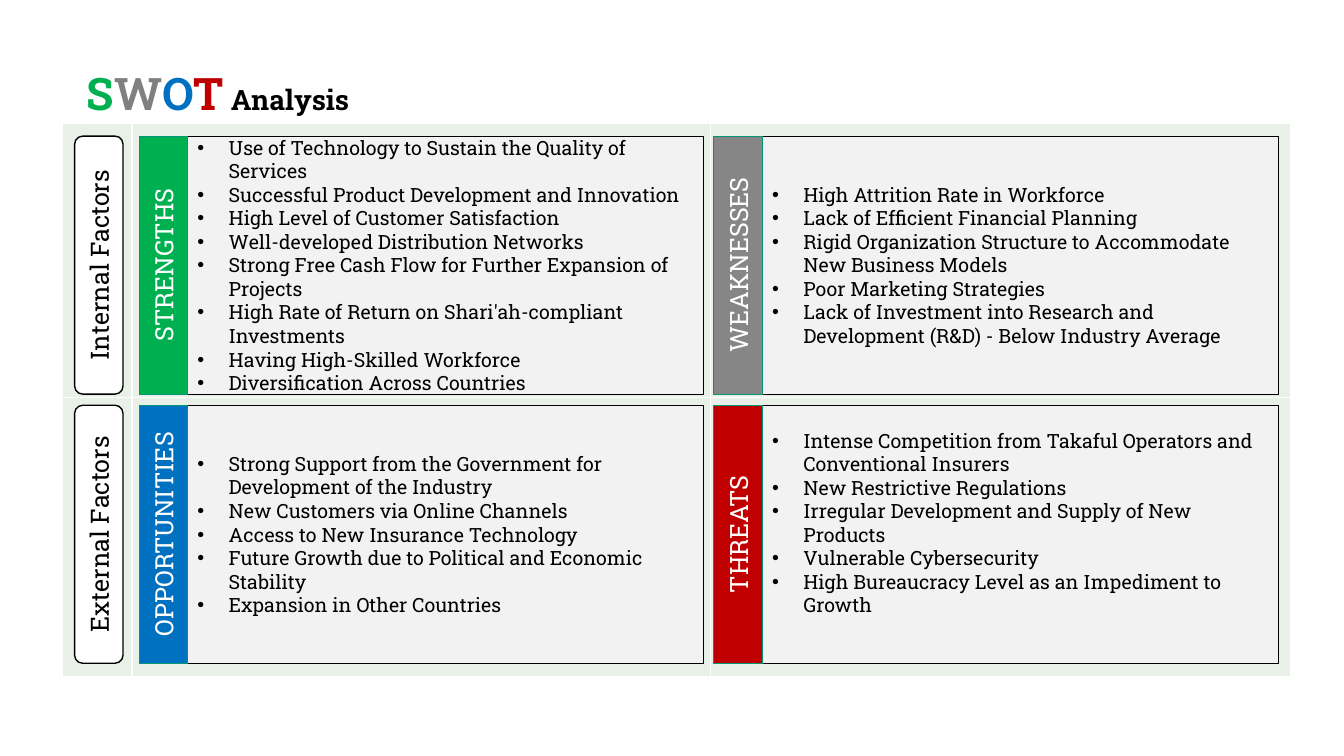
"""Build a SWOT analysis slide with two factor rows and four quadrants."""
from lxml import etree
from pptx import Presentation
from pptx.dml.color import RGBColor
from pptx.enum.shapes import MSO_SHAPE
from pptx.enum.text import MSO_ANCHOR, MSO_AUTO_SIZE, PP_ALIGN
from pptx.oxml.ns import qn
from pptx.util import Inches, Pt

RECT, ROUNDED = MSO_SHAPE.RECTANGLE, MSO_SHAPE.ROUNDED_RECTANGLE
LEFT, CENTER = PP_ALIGN.LEFT, PP_ALIGN.CENTER
TOP, MIDDLE = MSO_ANCHOR.TOP, MSO_ANCHOR.MIDDLE
NO_FIT = MSO_AUTO_SIZE.NONE

GREEN = RGBColor(0x00, 0xB0, 0x50)
GRAY = RGBColor(0x80, 0x80, 0x80)
BAND_GRAY = RGBColor(0x86, 0x86, 0x86)
BLUE = RGBColor(0x00, 0x70, 0xC0)
RED = RGBColor(0xC0, 0x00, 0x00)
TEAL = RGBColor(0x02, 0x96, 0x76)
BLACK = RGBColor(0x00, 0x00, 0x00)
WHITE = RGBColor(0xFF, 0xFF, 0xFF)
PANEL = RGBColor(0xF2, 0xF2, 0xF2)
GRID = RGBColor(0xE9, 0xF0, 0xE8)
FONT = "Roboto Slab"

TITLE = [("S", 32, GREEN), ("W", 32, GRAY), ("O", 32, BLUE), ("T", 32, RED),
         (" Analysis", 20, BLACK)]
FACTORS = ["Internal Factors", "External Factors"]
QUADRANTS = [
    ("STRENGTHS", GREEN, [
        "Use of Technology to Sustain the Quality of Services",
        "Successful Product Development and Innovation",
        "High Level of Customer Satisfaction",
        "Well-developed Distribution Networks",
        "Strong Free Cash Flow for Further Expansion of Projects",
        "High Rate of Return on Shari'ah-compliant Investments",
        "Having High-Skilled Workforce",
        "Diversification Across Countries"]),
    ("WEAKNESSES", BAND_GRAY, [
        "High Attrition Rate in Workforce",
        "Lack of Efficient Financial Planning",
        "Rigid Organization Structure to Accommodate New Business Models",
        "Poor Marketing Strategies",
        "Lack of Investment into Research and Development (R&D) - Below Industry Average"]),
    ("OPPORTUNITIES", BLUE, [
        "Strong Support from the Government for Development of the Industry",
        "New Customers via Online Channels",
        "Access to New Insurance Technology",
        "Future Growth due to Political and Economic Stability",
        "Expansion in Other Countries"]),
    ("THREATS", RED, [
        "Intense Competition from Takaful Operators and Conventional Insurers",
        "New Restrictive Regulations",
        "Irregular Development and Supply of New Products",
        "Vulnerable Cybersecurity",
        "High Bureaucracy Level as an Impediment to Growth"]),
]
BOTTOM_INSETS = {"THREATS": 0.28}

COLS, ROWS = [0.69, 5.74, 5.75], [2.72, 2.77]
BOX_X, BOX_Y, BOX_W, BOX_H = 1.86, 1.35, 5.12, 2.56
COL_STEP, ROW_STEP = 5.7, 2.67
BAND_W, FACTOR_X = 0.48, 0.98


def add_run(p, text, size, color, bold=False):
    r = p.add_run()
    r.text = text
    r.font.name, r.font.size, r.font.bold = FONT, Pt(size), bold
    r.font.color.rgb = color


def add_block(s, kind, x, y, w, h, fill, line, weight):
    sp = s.shapes.add_shape(kind, Inches(x), Inches(y), Inches(w), Inches(h))
    sp.shadow.inherit = False
    sp.fill.solid()
    sp.fill.fore_color.rgb = fill
    sp.line.color.rgb = line
    sp.line.width = Pt(weight)
    sp.text_frame.word_wrap = True
    sp.text_frame.vertical_anchor = MIDDLE
    return sp


def add_upright(s, kind, center_x, row, text, fill, line, weight, color):
    center_y = BOX_Y + row * ROW_STEP + BOX_H / 2
    sp = add_block(s, kind, center_x - BOX_H / 2, center_y - BAND_W / 2,
                   BOX_H, BAND_W, fill, line, weight)
    sp.rotation = 270
    p = sp.text_frame.paragraphs[0]
    p.alignment = CENTER
    add_run(p, text, 18, color)


def add_bullets(tf, items):
    for i, item in enumerate(items):
        p = tf.add_paragraph() if i else tf.paragraphs[0]
        p.alignment = LEFT
        pPr = p._p.get_or_add_pPr()
        pPr.set("marL", str(Inches(0.31)))
        pPr.set("indent", str(-Inches(0.31)))
        etree.SubElement(pPr, qn("a:buFont"), typeface="Arial")
        etree.SubElement(pPr, qn("a:buChar"), char="•")
        add_run(p, item, 14, BLACK)


def add_title(s):
    sp = s.shapes.title
    sp.left, sp.top = Inches(0.76), Inches(0.6)
    sp.width, sp.height = Inches(2.84), Inches(0.64)
    tf = sp.text_frame
    tf.auto_size, tf.vertical_anchor = NO_FIT, TOP
    p = tf.paragraphs[0]
    p.alignment = LEFT
    for text, size, color in TITLE:
        add_run(p, text, size, color, True)


def add_grid(s):
    table = s.shapes.add_table(len(ROWS), len(COLS), Inches(0.62), Inches(1.22),
                               Inches(sum(COLS)), Inches(sum(ROWS))).table
    table.first_row = table.horz_banding = False
    for column, width in zip(table.columns, COLS):
        column.width = Inches(width)
    for row, height in zip(table.rows, ROWS):
        row.height = Inches(height)
    for cell in table.iter_cells():
        cell.fill.solid()
        cell.fill.fore_color.rgb = GRID


def main():
    prs = Presentation()
    prs.slide_width, prs.slide_height = Inches(13.33), Inches(7.5)
    s = prs.slides.add_slide(prs.slide_layouts[5])
    add_title(s)
    add_grid(s)
    for i, (name, color, items) in enumerate(QUADRANTS):
        row, col = divmod(i, 2)
        x, y = BOX_X + col * COL_STEP, BOX_Y + row * ROW_STEP
        sp = add_block(s, RECT, x, y, BOX_W, BOX_H, PANEL, BLACK, 0.5)
        sp.text_frame.margin_bottom = Inches(BOTTOM_INSETS.get(name, 0.05))
        add_bullets(sp.text_frame, items)
        add_upright(s, RECT, x - BAND_W / 2, row, name, color, TEAL, 0.5, WHITE)
    for row, name in enumerate(FACTORS):
        add_upright(s, ROUNDED, FACTOR_X, row, name, WHITE, BLACK, 1, BLACK)
    prs.save("out.pptx")


if __name__ == "__main__":
    main()
